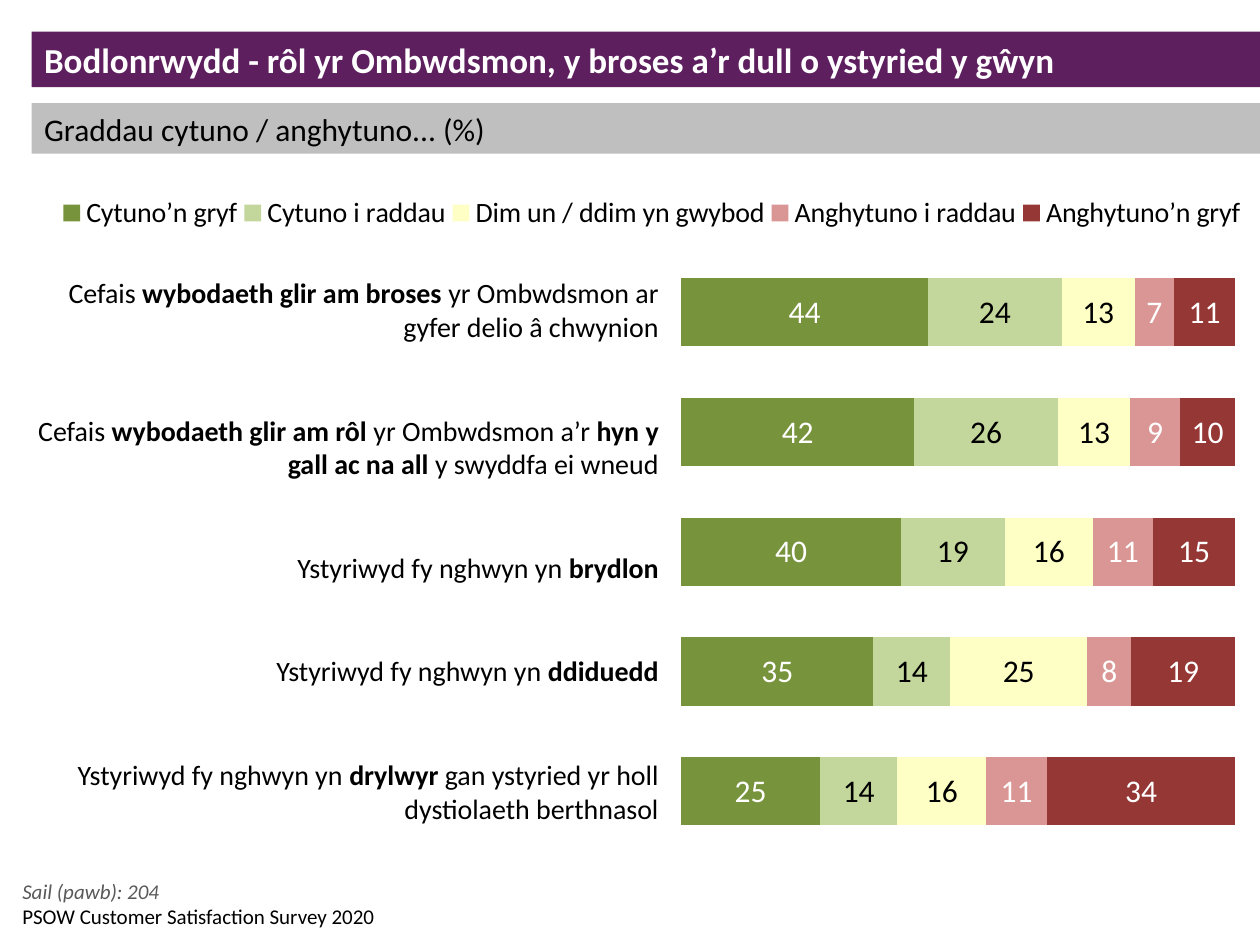
from lxml import etree
from pptx import Presentation
from pptx import util as u
from pptx.chart import data as chart_data
from pptx.dml.color import RGBColor
from pptx.enum import chart as charts, shapes, text
from pptx.oxml import ns

COLOURS = {
    "purple": "5D1F5E", "silver": "BFBFBF", "grey": "595959",
    "black": "000000", "white": "FFFFFF",
    "strong_agree": "77933C", "agree": "C3D69B", "neutral": "FEFFC5",
    "disagree": "D99694", "strong_disagree": "953735",
}

# Name, values, fill colour, label colour
RATINGS = [
    ("Cytuno’n gryf", (44, 42, 40, 35, 25), "strong_agree", "white"),
    ("Cytuno i raddau", (24, 26, 19, 14, 14), "agree", "black"),
    ("Dim un / ddim yn gwybod", (13, 13, 16, 25, 16), "neutral", "black"),
    ("Anghytuno i raddau", (7, 9, 11, 8, 11), "disagree", "white"),
    ("Anghytuno’n gryf", (11, 10, 15, 19, 34), "strong_disagree", "white"),
]

# Each statement alternates regular and bold runs, starting with regular
STATEMENTS = [
    ("Cefais ", "wybodaeth glir am broses",
     " yr Ombwdsmon ar gyfer delio â chwynion"),
    ("Cefais ", "wybodaeth glir am rôl", " yr Ombwdsmon a’r ",
     "hyn y gall ac na all ", "y swyddfa ei wneud"),
    ("Ystyriwyd fy nghwyn yn ", "brydlon"),
    ("Ystyriwyd fy nghwyn yn ", "ddiduedd"),
    ("Ystyriwyd fy nghwyn yn ", "drylwyr",
     " gan ystyried yr holl dystiolaeth berthnasol"),
]


def colour(name):
    return RGBColor.from_string(COLOURS[name])


def place_in_chart(parent, index, inner=False, **fractions):
    """Give a chart part a manual layout, as fractions of the chart area."""
    for old in parent.findall(ns.qn("c:layout")):
        parent.remove(old)
    layout = etree.Element(ns.qn("c:layout"))
    manual = etree.SubElement(layout, ns.qn("c:manualLayout"))
    settings = {"layoutTarget": "inner"} if inner else {}
    settings.update(xMode="edge", yMode="edge", **fractions)
    for tag, value in settings.items():
        etree.SubElement(manual, ns.qn("c:" + tag)).set("val", str(value))
    parent.insert(index, layout)


class SlideBuilder:
    font = "Calibri"

    def __init__(self, page):
        self.page = page

    def style(self, font, size, name="black", bold=False, italic=False):
        font.name, font.size = self.font, u.Pt(size)
        font.bold, font.italic = bold, italic
        font.color.rgb = colour(name)

    def add_run(self, para, words, size, **look):
        span = para.add_run()
        span.text = words
        self.style(span.font, size, **look)

    def banner(self, top, height, words, fill, size, **look):
        bar = self.page.shapes.add_shape(
            shapes.MSO_SHAPE.RECTANGLE,
            u.Cm(0.64), u.Cm(top), u.Cm(24.76), u.Cm(height))
        bar.shadow.inherit = False
        bar.fill.solid()
        bar.fill.fore_color.rgb = colour(fill)
        bar.line.fill.background()
        bar.text_frame.vertical_anchor = text.MSO_ANCHOR.MIDDLE
        para = bar.text_frame.paragraphs[0]
        para.alignment = text.PP_ALIGN.LEFT
        self.add_run(para, words, size, **look)

    def text_box(self, top, width, height):
        box = self.page.shapes.add_textbox(
            u.Cm(0.2), u.Cm(top), u.Cm(width), u.Cm(height))
        box.text_frame.word_wrap = True
        return box.text_frame

    def note(self, top, words, **look):
        frame = self.text_box(top, 13.33, 0.77)
        self.add_run(frame.paragraphs[0], words, 12, **look)

    def statements(self, rows):
        frame = self.text_box(5.44, 13.33, 11.71)
        for number, parts in enumerate(rows):
            para = frame.add_paragraph() if number else frame.paragraphs[0]
            para.alignment = text.PP_ALIGN.RIGHT
            if number:
                para.space_before = u.Pt(40)
            for position, words in enumerate(parts):
                self.add_run(para, words, 16, bold=position % 2 == 1)

    def rating_chart(self, ratings):
        data = chart_data.CategoryChartData()
        data.categories = [str(n + 1) for n in range(len(STATEMENTS))]
        for name, values, *_ in ratings:
            data.add_series(name, values)
        chart = self.page.shapes.add_chart(
            charts.XL_CHART_TYPE.BAR_STACKED_100,
            u.Cm(0.64), u.Cm(3.45), u.Cm(24.76), u.Cm(14.12), data).chart
        self.style(chart.font, 18)
        chart.has_title = False
        chart.category_axis.reverse_order = True
        for axis in (chart.category_axis, chart.value_axis):
            axis.has_major_gridlines = False
            axis.visible = False

        plot = chart.plots[0]
        plot.gap_width, plot.overlap = 75, 100
        plot.vary_by_categories = False
        for series, (_, _, fill, label) in zip(plot.series, ratings):
            series.format.fill.solid()
            series.format.fill.fore_color.rgb = colour(fill)
            series.data_labels.show_value = True
            self.style(series.data_labels.font, 18, label)

        chart.has_legend = True
        legend = chart.legend
        legend.position = charts.XL_LEGEND_POSITION.TOP
        legend.include_in_layout = False
        self.style(legend.font, 16)
        place_in_chart(legend._element, 1, x=0.02, y=0.02, w=0.97, h=0.08)
        plot_area = chart._chartSpace.chart.plotArea
        place_in_chart(plot_area, 0, inner=True,
                       x=0.529, y=0.116, w=0.451, h=0.855)


def main():
    deck = Presentation()
    deck.slide_width, deck.slide_height = u.Cm(25.4), u.Cm(19.05)
    slide = SlideBuilder(deck.slides.add_slide(deck.slide_layouts[6]))
    slide.banner(0.64, 1.12,
                 "Bodlonrwydd - rôl yr Ombwdsmon, y broses a’r dull o ystyried y gŵyn",
                 "purple", 20, name="white", bold=True)
    slide.banner(2.08, 1.02, "Graddau cytuno / anghytuno... (%)", "silver", 18)
    slide.rating_chart(RATINGS)
    slide.statements(STATEMENTS)
    slide.note(17.58, "Sail (pawb): 204", name="grey", italic=True)
    slide.note(18.09, "PSOW Customer Satisfaction Survey 2020")
    deck.save("out.pptx")


if __name__ == "__main__":
    main()
